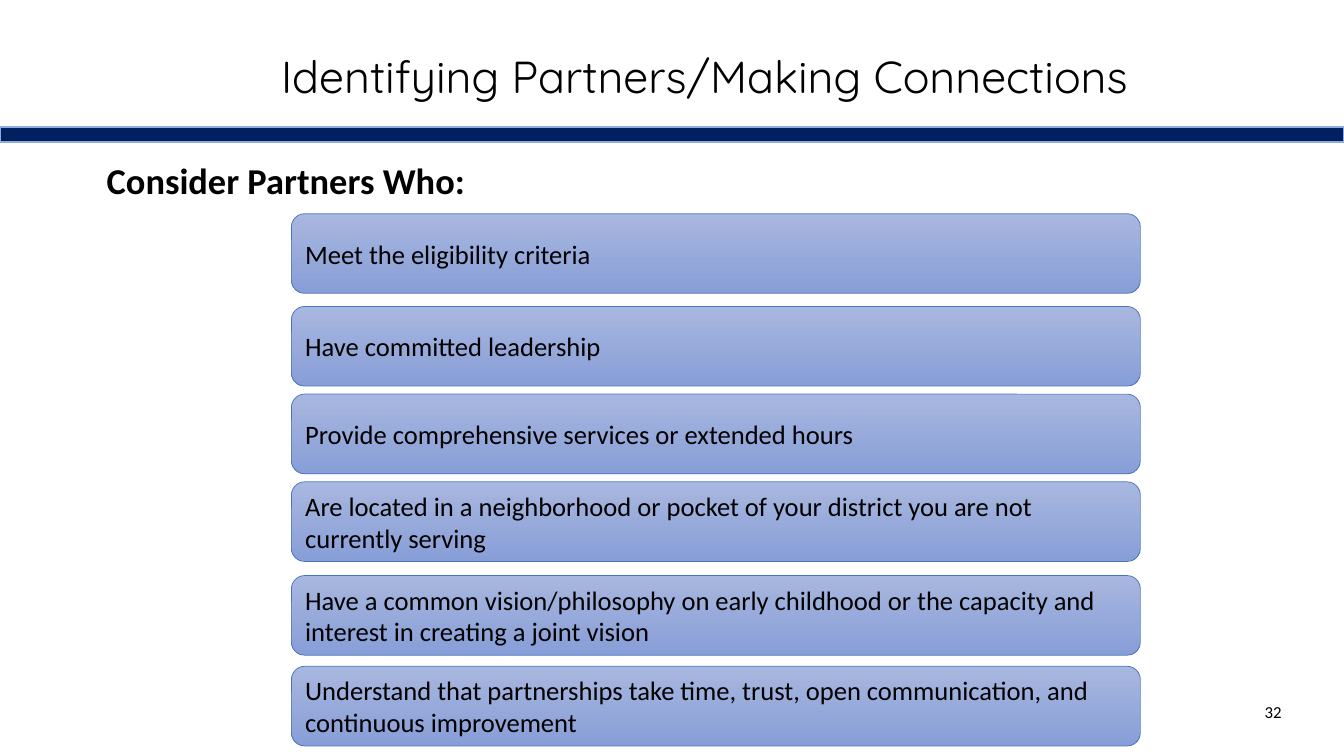
from dataclasses import dataclass

from pptx import Presentation
from pptx.dml.color import RGBColor as RGB
from pptx.enum.shapes import MSO_SHAPE as SHAPE
from pptx.enum.text import MSO_ANCHOR as ANCHOR, PP_ALIGN as ALIGN
from pptx.util import Inches, Pt


@dataclass(frozen=True)
class Theme:
    ink: str = "000000"
    navy: str = "002060"
    bar_line: str = "8FAADC"
    card_top: str = "A8B7DF"
    card_bottom: str = "889ED7"
    card_line: str = "4472C4"
    title_font: str = "Quicksand"
    body_font: str = "Calibri"
    title_size: int = 32
    heading_size: int = 26
    card_size: int = 19
    number_size: int = 12


THEME = Theme()
SLIDE_W, SLIDE_H = 13.33, 7.5
CARD_H = 0.79

# Each criterion with the top of its card, measured from the top of the list
CRITERIA = [
    (0, "Meet the eligibility criteria"),
    (0.92, "Have committed leadership"),
    (1.79, "Provide comprehensive services or extended hours"),
    (2.66, "Are located in a neighborhood or pocket of your district "
           "you are not currently serving"),
    (3.59, "Have a common vision/philosophy on early childhood or the "
           "capacity and interest in creating a joint vision"),
    (4.49, "Understand that partnerships take time, trust, open "
           "communication, and continuous improvement"),
]


def write(shape, text, size, font=THEME.body_font, bold=False,
          anchor=ANCHOR.MIDDLE, **para_format):
    tf = shape.text_frame
    tf.word_wrap = True
    tf.vertical_anchor = anchor
    p = tf.paragraphs[0]
    for name, value in {"alignment": ALIGN.LEFT, **para_format}.items():
        setattr(p, name, value)
    r = p.add_run()
    r.text = text
    look = {"name": font, "size": Pt(size), "bold": bold}
    for name, value in look.items():
        setattr(r.font, name, value)
    r.font.color.rgb = RGB.from_string(THEME.ink)


def add_label(s, box, text, size, **look):
    write(s.shapes.add_textbox(*map(Inches, box)), text, size, **look)


def add_block(s, kind, box, line, width):
    sp = s.shapes.add_shape(kind, *map(Inches, box))
    sp.shadow.inherit = False
    sp.line.color.rgb = RGB.from_string(line)
    sp.line.width = Pt(width)
    return sp


def add_title_bar(s, box):
    bar = add_block(s, SHAPE.RECTANGLE, box, THEME.bar_line, 1)
    bar.fill.solid()
    bar.fill.fore_color.rgb = RGB.from_string(THEME.navy)


def add_card(s, box, text):
    card = add_block(s, SHAPE.ROUNDED_RECTANGLE, box, THEME.card_line, 0.5)
    card.fill.gradient()
    card.fill.gradient_angle = 270  # top to bottom
    shades = (THEME.card_top, THEME.card_bottom)
    for stop, shade in zip(card.fill.gradient_stops, shades):
        stop.color.rgb = RGB.from_string(shade)
    write(card, text, THEME.card_size)


def add_criteria(s, box):
    left, top, width, _ = box
    for offset, text in CRITERIA:
        add_card(s, (left, top + offset, width, CARD_H), text)


def build_slide(prs):
    s = prs.slides.add_slide(prs.slide_layouts[6])
    # Title and heading
    add_label(s, (0.67, 0.06, 12.64, 1.45),
              "Identifying Partners/Making Connections", THEME.title_size,
              font=THEME.title_font, alignment=ALIGN.CENTER, line_spacing=0.9)
    add_label(s, (0.96, 1.57, 11.41, 0.5), "Consider Partners Who:",
              THEME.heading_size, bold=True, anchor=ANCHOR.TOP,
              line_spacing=0.9, space_before=Pt(10))
    # List of criteria
    add_criteria(s, (2.89, 2.12, 8.42, 5.28))
    # Slide number and bar under the title
    add_label(s, (9.81, 6.86, 3, 0.4), "32", THEME.number_size,
              alignment=ALIGN.RIGHT)
    add_title_bar(s, (0, 1.26, SLIDE_W, 0.15))


def main():
    prs = Presentation()
    prs.slide_width, prs.slide_height = Inches(SLIDE_W), Inches(SLIDE_H)
    build_slide(prs)
    prs.save("out.pptx")


if __name__ == "__main__":
    main()
